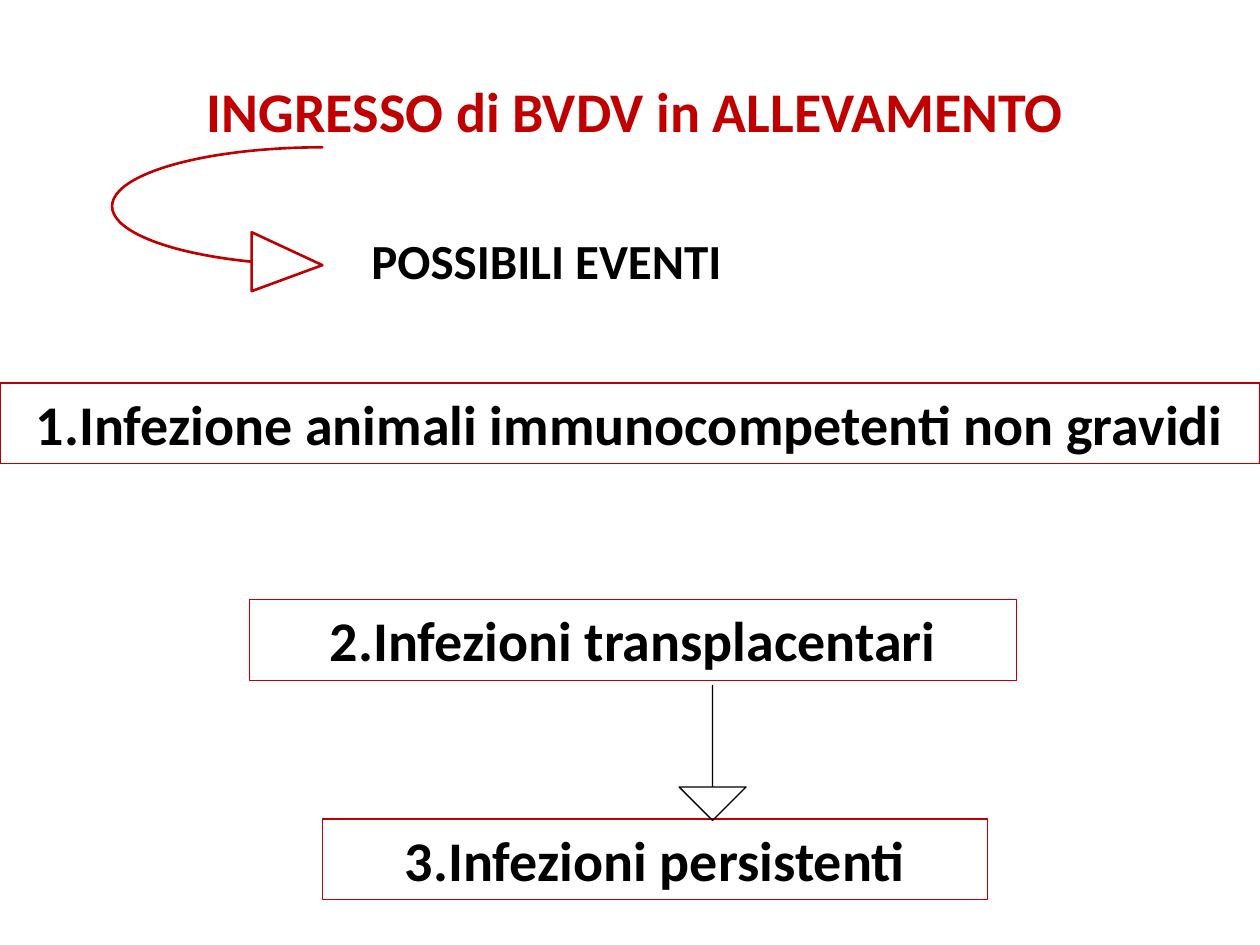
import dataclasses

import pptx
import pptx.dml.color
import pptx.enum.shapes
import pptx.enum.text
import pptx.util

Cm = pptx.util.Cm
Pt = pptx.util.Pt
Shape = pptx.enum.shapes.MSO_SHAPE


@dataclasses.dataclass(frozen=True)
class Theme:
    font: str = "Calibri"
    red: str = "C00000"
    black: str = "000000"
    large: int = 32
    medium: int = 28
    thin: float = 0.75
    thick: float = 1.5


class Page:
    """Draws elements on one slide; all positions and sizes are in centimetres."""

    def __init__(self, slide, theme):
        self.shapes = slide.shapes
        self.theme = theme

    def set_text(self, shape, text, size, color, wrap=True):
        frame = shape.text_frame
        frame.word_wrap = wrap
        frame.auto_size = pptx.enum.text.MSO_AUTO_SIZE.SHAPE_TO_FIT_TEXT
        frame.vertical_anchor = pptx.enum.text.MSO_ANCHOR.TOP
        para = frame.paragraphs[0]
        para.alignment = pptx.enum.text.PP_ALIGN.CENTER
        span = para.add_run()
        span.text = text
        span.font.name = self.theme.font
        span.font.size = Pt(size)
        span.font.bold = True
        span.font.color.rgb = pptx.dml.color.RGBColor.from_string(color)

    def label(self, text, bounds, size, color, wrap=True):
        box = self.shapes.add_textbox(*map(Cm, bounds))
        self.set_text(box, text, size, color, wrap)

    def outline(self, kind, bounds, color, width):
        shape = self.shapes.add_shape(kind, *map(Cm, bounds))
        shape.shadow.inherit = False
        shape.fill.background()
        shape.line.color.rgb = pptx.dml.color.RGBColor.from_string(color)
        shape.line.width = Pt(width)
        return shape

    def event(self, text, bounds):
        box = self.outline(Shape.RECTANGLE, bounds, self.theme.red, self.theme.thin)
        self.set_text(box, text, self.theme.large, self.theme.black)

    def arrow(self, kind, bounds, color, width, adjustments):
        arrow = self.outline(kind, bounds, color, width)
        for index, value in enumerate(adjustments):
            arrow.adjustments[index] = value


def main():
    deck = pptx.Presentation()
    deck.slide_width, deck.slide_height = Cm(25.4), Cm(19.05)
    theme = Theme()
    page = Page(deck.slides.add_slide(deck.slide_layouts[6]), theme)

    row_height = 1.63
    page.label("INGRESSO di BVDV in ALLEVAMENTO", (0.71, 1.42, 24.2, row_height),
               theme.large, theme.red)
    page.label("POSSIBILI EVENTI", (7.19, 4.52, 7.65, 1.45),
               theme.medium, theme.black, wrap=False)

    events = [
        ("1.Infezione animali immunocompetenti non gravidi", 0, 7.72, 25.4),
        ("2.Infezioni transplacentari", 5.03, 12.09, 15.47),
        ("3.Infezioni persistenti", 6.5, 16.51, 13.41),
    ]
    for text, left, top, width in events:
        page.event(text, (left, top, width, row_height))

    page.arrow(Shape.CURVED_RIGHT_ARROW, (2.26, 2.97, 4.24, 2.97),
               theme.red, theme.thick, (0, 0.4, 0.48))
    page.arrow(Shape.DOWN_ARROW, (13.69, 13.82, 1.35, 2.72),
               theme.black, theme.thin, (0, 0.5))

    deck.save("out.pptx")


if __name__ == "__main__":
    main()
